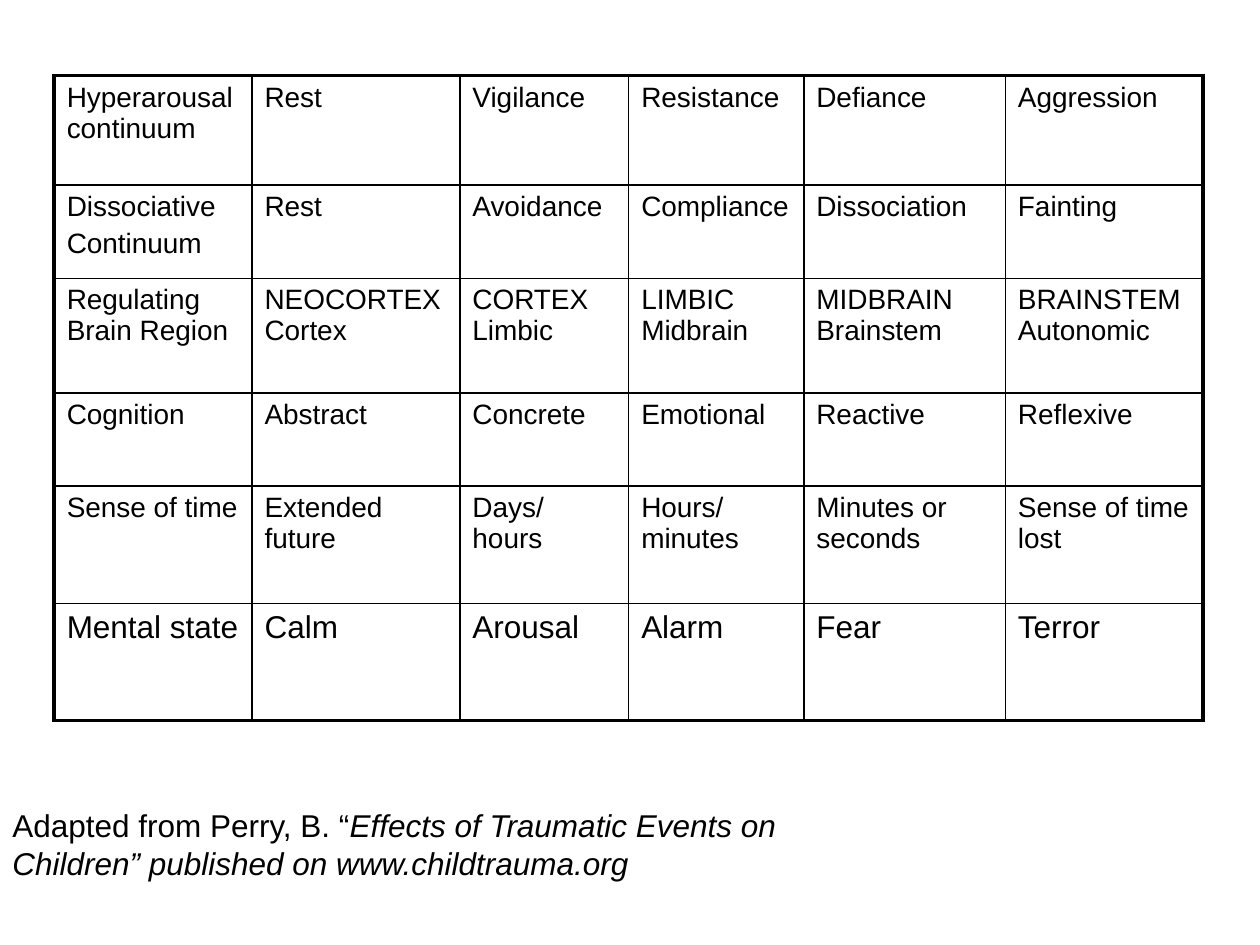
from lxml.etree import SubElement
from pptx import Presentation
from pptx.dml.color import RGBColor
from pptx.oxml.ns import qn
from pptx.util import Inches, Pt

BLACK = "000000"
COLUMN_WIDTHS = [1.57, 1.65, 1.34, 1.39, 1.6, 1.57]
ROW_HEIGHTS = [0.87, 0.74, 0.91, 0.74, 0.93, 0.93]
CONTINUUM_ROWS = [
    ["Hyperarousal continuum", "Rest", "Vigilance", "Resistance", "Defiance", "Aggression"],
    ["Dissociative\nContinuum", "Rest", "Avoidance", "Compliance", "Dissociation", "Fainting"],
    ["Regulating Brain Region", "NEOCORTEX Cortex", "CORTEX Limbic",
     "LIMBIC Midbrain", "MIDBRAIN Brainstem", "BRAINSTEM Autonomic"],
    ["Cognition", "Abstract", "Concrete", "Emotional", "Reactive", "Reflexive"],
    ["Sense of time", "Extended future", "Days/ hours", "Hours/ minutes",
     "Minutes or seconds", "Sense of time lost"],
    ["Mental state", "Calm", "Arousal", "Alarm", "Fear", "Terror"],
]


def color(hex_string):
    return RGBColor.from_string(hex_string)


def add_text(paragraph, text, size=16, italic=False, font="Arial", fill=BLACK):
    run = paragraph.add_run()
    run.text = text
    run.font.name = font
    run.font.size = Pt(size)
    run.font.italic = italic
    run.font.color.rgb = color(fill)


class ContinuumSlide:
    inner_line, outer_line = 1, 2.25
    body_size, emphasis_size = 16, 18

    def __init__(self, presentation):
        self.slide = presentation.slides.add_slide(presentation.slide_layouts[6])

    def border(self, cell, side, width):
        line = SubElement(cell._tc.get_or_add_tcPr(), qn(f"a:ln{side}"), w=str(Pt(width)))
        solid = SubElement(line, qn("a:solidFill"))
        SubElement(solid, qn("a:srgbClr"), val=BLACK)

    def cell(self, cell, text, size, outer_sides):
        for side in "LRTB":
            self.border(cell, side, self.outer_line if side in outer_sides else self.inner_line)
        cell.fill.background()
        for index, line in enumerate(text.split("\n")):
            if index == 0:
                paragraph = cell.text_frame.paragraphs[0]
            else:
                paragraph = cell.text_frame.add_paragraph()
                paragraph.space_before = Pt(3)
            add_text(paragraph, line, size=size)

    def table(self, left, top, rows, widths, heights):
        table = self.slide.shapes.add_table(
            len(rows), len(widths), Inches(left), Inches(top),
            Inches(sum(widths)), Inches(sum(heights))).table
        table.first_row = table.horz_banding = False
        for column, width in zip(table.columns, widths):
            column.width = Inches(width)
        for row, height in zip(table.rows, heights):
            row.height = Inches(height)

        last_row, last_column = len(rows) - 1, len(widths) - 1
        for r, labels in enumerate(rows):
            size = self.emphasis_size if r == last_row else self.body_size
            for c, label in enumerate(labels):
                edges = {"L": c == 0, "R": c == last_column, "T": r == 0, "B": r == last_row}
                outer_sides = [side for side, is_outer in edges.items() if is_outer]
                self.cell(table.cell(r, c), label, size, outer_sides)

    def text(self, left, top, width, height, runs):
        frame = self.slide.shapes.add_textbox(
            Inches(left), Inches(top), Inches(width), Inches(height)).text_frame
        frame.word_wrap = True
        for text, italic in runs:
            add_text(frame.paragraphs[0], text, size=self.emphasis_size, italic=italic)


def main():
    presentation = Presentation()
    presentation.slide_width = Inches(10)
    presentation.slide_height = Inches(7.5)
    continuum = ContinuumSlide(presentation)

    # Arousal states by continuum
    continuum.table(0.43, 0.6, CONTINUUM_ROWS, COLUMN_WIDTHS, ROW_HEIGHTS)

    # Source citation
    continuum.text(0, 6.35, 6.89, 1.15, [
        ("Adapted from Perry, B. “", False),
        ("Effects of Traumatic Events on Children” published on www.childtrauma.org", True),
    ])
    presentation.save("out.pptx")


if __name__ == "__main__":
    main()
